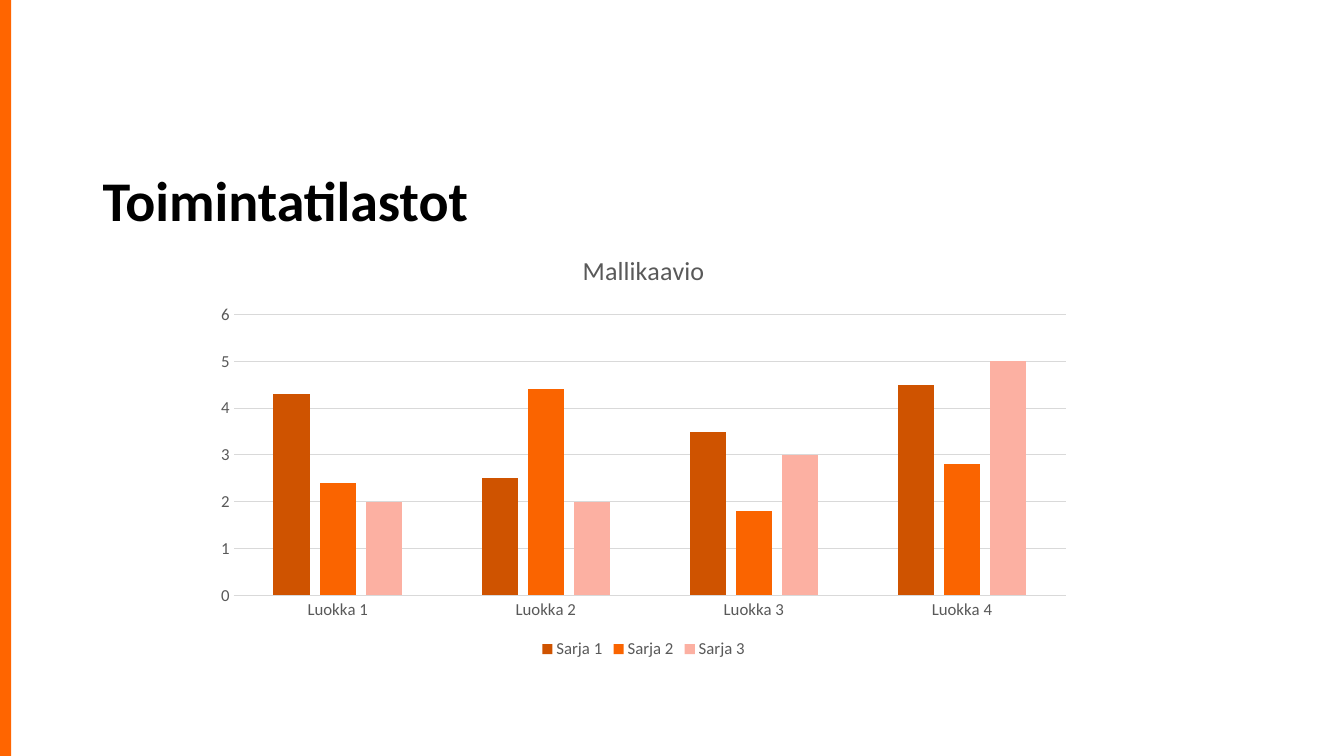
import pptx
import pptx.util
import pptx.chart.data
import pptx.dml.color
import pptx.enum.chart
import pptx.enum.shapes
import pptx.enum.text

Pt = pptx.util.Pt

TITLE = "Toimintatilastot"
CHART_TITLE = "Mallikaavio"
CATEGORIES = ["Luokka 1", "Luokka 2", "Luokka 3", "Luokka 4"]
SERIES = [
    ("Sarja 1", (4.3, 2.5, 3.5, 4.5), "dark orange"),
    ("Sarja 2", (2.4, 4.4, 1.8, 2.8), "orange"),
    ("Sarja 3", (2, 2, 3, 5), "salmon"),
]
COLORS = {
    "stripe": "FF6500",
    "title": "000000",
    "label": "595959",
    "grid": "D9D9D9",
    "dark orange": "CF5300",
    "orange": "FA6400",
    "salmon": "FCB0A2",
}
FONT = "Calibri"
SLIDE_WIDTH, SLIDE_HEIGHT = 960, 540
STRIPE_BOX = (0, 0, 7.92, SLIDE_HEIGHT)
TITLE_BOX = (66.24, 66.24, 828, 104.4)
CHART_BOX = (145.44, 167.04, 628.56, 306.72)


def color(name):
    return pptx.dml.color.RGBColor.from_string(COLORS[name])


def points(box):
    return [Pt(length) for length in box]


def style_font(font, size, color_name, bold=False):
    font.name = FONT
    font.size = Pt(size)
    font.bold = bold
    font.color.rgb = color(color_name)


def style_line(line):
    line.color.rgb = color("grid")
    line.width = Pt(0.75)


def add_stripe(slide):
    stripe = slide.shapes.add_shape(
        pptx.enum.shapes.MSO_SHAPE.RECTANGLE, *points(STRIPE_BOX))
    stripe.shadow.inherit = False
    stripe.fill.solid()
    stripe.fill.fore_color.rgb = color("stripe")
    stripe.line.fill.background()


def add_title(slide):
    text_frame = slide.shapes.add_textbox(*points(TITLE_BOX)).text_frame
    text_frame.word_wrap = True
    text_frame.vertical_anchor = pptx.enum.text.MSO_ANCHOR.BOTTOM
    text_frame.text = TITLE
    paragraph = text_frame.paragraphs[0]
    paragraph.line_spacing = 0.9
    style_font(paragraph.runs[0].font, 40, "title", bold=True)


def add_column_chart(slide):
    chart_data = pptx.chart.data.CategoryChartData()
    chart_data.categories = CATEGORIES
    for name, values, _ in SERIES:
        chart_data.add_series(name, values)
    chart = slide.shapes.add_chart(
        pptx.enum.chart.XL_CHART_TYPE.COLUMN_CLUSTERED,
        *points(CHART_BOX), chart_data).chart
    style_font(chart.font, 12, "label")

    chart.has_title = True
    chart.chart_title.include_in_layout = False
    title_frame = chart.chart_title.text_frame
    title_frame.text = CHART_TITLE
    style_font(title_frame.paragraphs[0].runs[0].font, 18.6, "label")

    chart.has_legend = True
    chart.legend.position = pptx.enum.chart.XL_LEGEND_POSITION.BOTTOM
    chart.legend.include_in_layout = False
    style_font(chart.legend.font, 12, "label")

    for axis in (chart.category_axis, chart.value_axis):
        axis.major_tick_mark = pptx.enum.chart.XL_TICK_MARK.NONE
        axis.minor_tick_mark = pptx.enum.chart.XL_TICK_MARK.NONE
        style_font(axis.tick_labels.font, 12, "label")
    style_line(chart.category_axis.format.line)
    value_axis = chart.value_axis
    value_axis.minimum_scale, value_axis.maximum_scale = 0, 6
    value_axis.major_unit = 1
    value_axis.format.line.fill.background()
    value_axis.has_major_gridlines = True
    style_line(value_axis.major_gridlines.format.line)

    plot = chart.plots[0]
    plot.vary_by_categories = False
    plot.gap_width = 219
    plot.overlap = -27
    for series, (_, _, color_name) in zip(plot.series, SERIES):
        series.invert_if_negative = False
        series.format.fill.solid()
        series.format.fill.fore_color.rgb = color(color_name)


def main():
    presentation = pptx.Presentation()
    presentation.slide_width = Pt(SLIDE_WIDTH)
    presentation.slide_height = Pt(SLIDE_HEIGHT)
    slide = presentation.slides.add_slide(presentation.slide_layouts[6])
    add_stripe(slide)
    add_title(slide)
    add_column_chart(slide)
    presentation.save("out.pptx")


if __name__ == "__main__":
    main()
